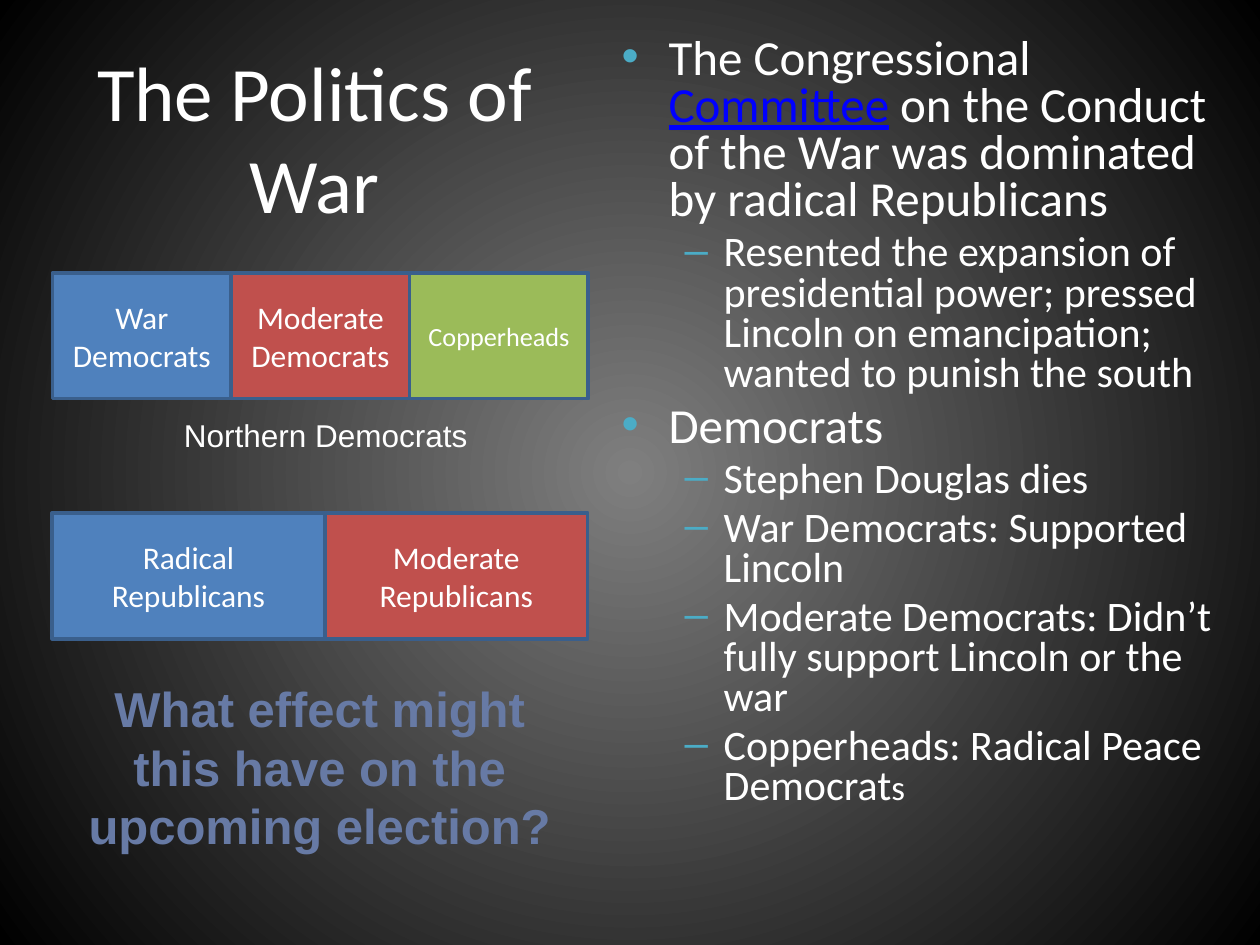
from lxml import etree
from pptx import Presentation
from pptx.dml import color
from pptx.enum import shapes, text
from pptx.oxml import ns
from pptx.util import Cm, Pt

WHITE, BLUE, RED, GREEN = "FFFFFF", "4F81BD", "C0504D", "9BBB59"
EDGE, BULLET, LINK, QUESTION = "3A5F8C", "4BACC6", "0000FF", "677AA5"
DEMOCRATS = [
    (["War", "Democrats"], 3.6, BLUE, 18),
    (["Moderate", "Democrats"], 3.6, RED, 18),
    (["Copperheads"], 3.6, GREEN, 15),
]
REPUBLICANS = [
    (["Radical Republicans"], 5.5, BLUE, 18),
    (["Moderate", "Republicans"], 5.3, RED, 18),
]
POINTS = [
    (0, [("The Congressional ", {}), ("Committee", {"tint": LINK, "underline": True}),
         (" on the Conduct of the War was dominated by radical Republicans", {})]),
    (1, [("Resented the expansion of presidential power; pressed Lincoln on "
          "emancipation; wanted to punish the south", {})]),
    (0, [("Democrats", {})]),
    (1, [("Stephen Douglas dies", {})]),
    (1, [("War Democrats: Supported Lincoln", {})]),
    (1, [("Moderate Democrats: Didn’t fully support Lincoln or the war", {})]),
    (1, [("Copperheads: Radical Peace Democrat", {}), ("s", {"size": 20})]),
]
LEVELS = [("•", 28, 0.95, 0.95), ("–", 24, 2.06, 0.79)]


def rgb(value):
    return color.RGBColor.from_string(value)


def style(font, size=None, tint=None, name=None, bold=None, underline=None):
    if size:
        font.size = Pt(size)
    if tint:
        font.color.rgb = rgb(tint)
    if name:
        font.name = name
    font.bold = bold
    font.underline = underline


def write_lines(frame, lines, **look):
    for index, line in enumerate(lines):
        para = frame.paragraphs[0] if index == 0 else frame.add_paragraph()
        para.text = line
        para.alignment = text.PP_ALIGN.CENTER
        style(para.font, **look)


def paint_background(page):
    fill = page.background.fill
    fill.gradient()
    for stop, position, tint in zip(fill.gradient_stops, (0, 1), ("7F7F7F", "000000")):
        stop.position = position
        stop.color.rgb = rgb(tint)
    gradient = page.element.find(".//" + ns.qn("a:gradFill"))
    gradient.remove(gradient.find(ns.qn("a:lin")))
    circle = etree.SubElement(gradient, ns.qn("a:path"), path="circle")
    etree.SubElement(circle, ns.qn("a:fillToRect"), l="50000", t="50000", r="50000", b="50000")


def place_title(page, left, top, width, height):
    title = page.shapes.title
    title.left, title.top, title.width, title.height = map(Cm, (left, top, width, height))
    frame = title.text_frame
    frame.auto_size = text.MSO_AUTO_SIZE.NONE
    frame.vertical_anchor = text.MSO_ANCHOR.MIDDLE
    write_lines(frame, ["The Politics of War"], size=44, tint=WHITE, name="Calibri")


def add_text(page, left, top, width, height, lines=(), wrap=True, **look):
    box = page.shapes.add_textbox(*map(Cm, (left, top, width, height)))
    box.text_frame.word_wrap = wrap
    write_lines(box.text_frame, lines, **look)
    return box.text_frame


def add_bullet(para, level):
    mark, size, indent, hanging = LEVELS[level]
    para.level = level
    para.line_spacing = 0.8
    properties = para._p.get_or_add_pPr()
    properties.set("marL", str(Cm(indent)))
    properties.set("indent", str(-Cm(hanging)))
    tint = etree.SubElement(properties, ns.qn("a:buClr"))
    etree.SubElement(tint, ns.qn("a:srgbClr"), val=BULLET)
    etree.SubElement(properties, ns.qn("a:buFont"), typeface="Arial")
    etree.SubElement(properties, ns.qn("a:buChar"), char=mark)
    style(para.font, size=size, tint=WHITE, name="Calibri")


def add_points(page, left, top, width, height):
    frame = add_text(page, left, top, width, height)
    for index, (level, pieces) in enumerate(POINTS):
        para = frame.paragraphs[0] if index == 0 else frame.add_paragraph()
        add_bullet(para, level)
        if index:
            para.space_before = Pt(0.2 * LEVELS[level][1])
        for wording, look in pieces:
            span = para.add_run()
            span.text = wording
            if look:
                style(span.font, **look)


def add_party(page, left, top, height, factions):
    for lines, width, tint, size in factions:
        box = page.shapes.add_shape(
            shapes.MSO_SHAPE.RECTANGLE, Cm(left), Cm(top), Cm(width), Cm(height))
        box.shadow.inherit = False
        box.fill.solid()
        box.fill.fore_color.rgb = rgb(tint)
        box.line.color.rgb = rgb(EDGE)
        box.line.width = Pt(2)
        box.text_frame.vertical_anchor = text.MSO_ANCHOR.MIDDLE
        write_lines(box.text_frame, lines, size=size, tint=WHITE, name="Calibri")
        left += width


def main():
    deck = Presentation()
    deck.slide_width, deck.slide_height = Cm(25.4), Cm(19.05)
    page = deck.slides.add_slide(deck.slide_layouts.get_by_name("Title Only"))
    paint_background(page)
    place_title(page, 0.42, 0.42, 11.85, 4.66)
    add_points(page, 12.28, 0.64, 12.49, 17.57)
    add_party(page, 1.06, 5.5, 2.54, DEMOCRATS)
    add_text(page, 3.39, 8.26, 6.35, 1.06, ["Northern Democrats"],
             size=18, tint=WHITE, name="Arial")
    add_text(page, 1.48, 13.55, 9.93, 3.83,
             ["What effect might", "this have on the", "upcoming election?"],
             wrap=False, size=28, tint=QUESTION, name="Arial", bold=True)
    add_party(page, 1.05, 10.34, 2.54, REPUBLICANS)
    deck.save("out.pptx")


if __name__ == "__main__":
    main()
